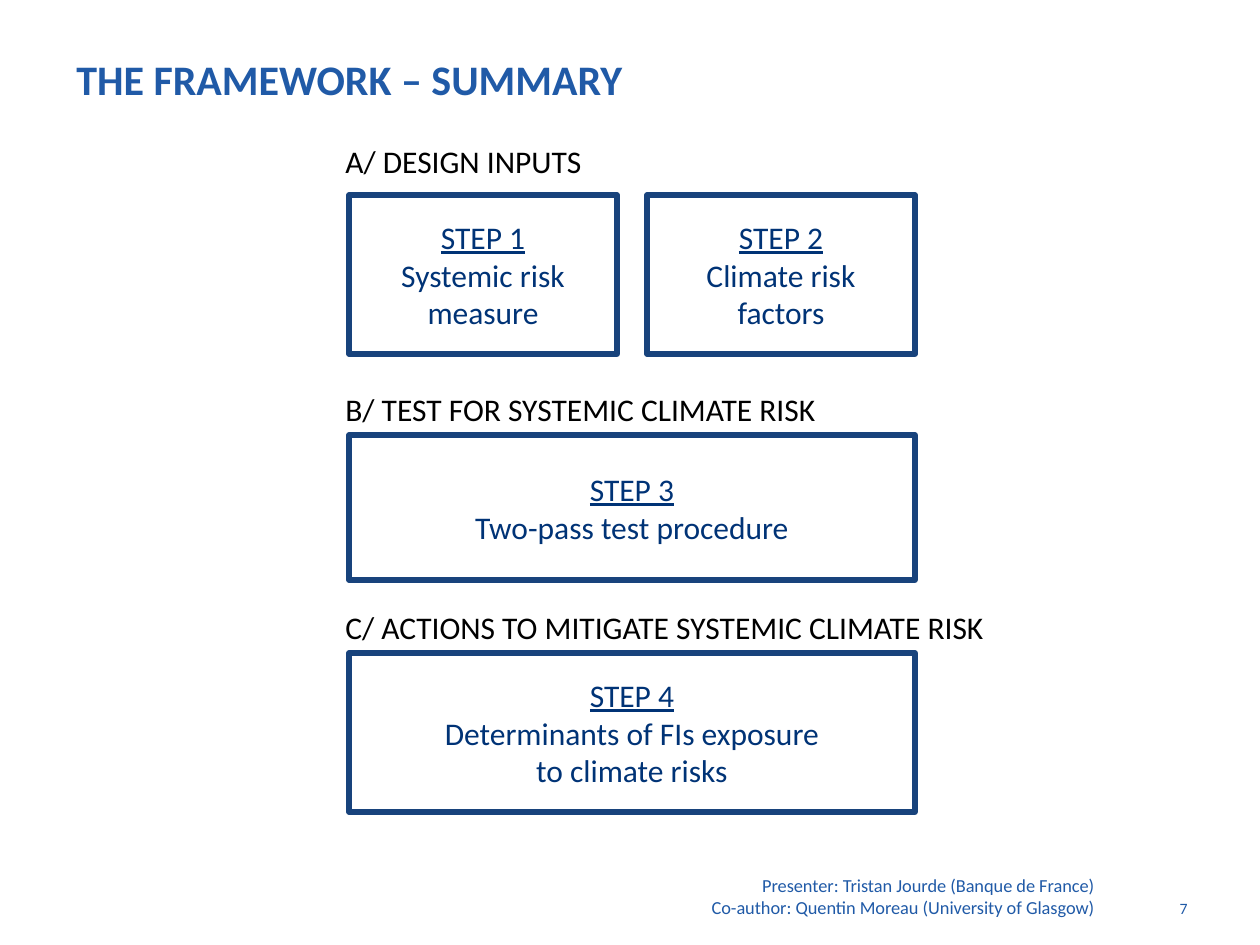
from dataclasses import dataclass

from pptx import Presentation
from pptx.dml.color import RGBColor
from pptx.enum.shapes import MSO_SHAPE as Shape
from pptx.enum.text import MSO_ANCHOR as Anchor, PP_ALIGN as Align
from pptx.util import Emu, Pt

PX = 914400 / 126
FONT = "Calibri"
BLUE = RGBColor(0x20, 0x5A, 0xA7)
NAVY = RGBColor(0x00, 0x33, 0x76)
EDGE = RGBColor(0x18, 0x43, 0x7C)
BLACK = RGBColor(0, 0, 0)

# Grid of the step boxes
LEFT, WIDE, GAP = 349, 566, 30
HALF = (WIDE - GAP) // 2
INDENT = 16  # labels start this far left of the boxes


@dataclass
class Label:
    text: str
    x: int
    y: int
    w: int
    h: int
    size: float = 18
    color: RGBColor = BLACK
    align: Align = Align.LEFT
    anchor: Anchor = Anchor.TOP
    bold: bool = False
    wrap: bool = True


@dataclass
class Step:
    head: str
    body: str
    x: int
    y: int
    w: int
    h: int


def px(n: int) -> Emu:
    return Emu(round(n * PX))


def write(frame, text: str, size: float, color: RGBColor, align: Align) -> None:
    frame.text = text
    for para in frame.paragraphs:
        para.alignment = align
        for run in para.runs:
            font = run.font
            font.name, font.size, font.color.rgb = FONT, Pt(size), color


def draw_label(slide, item: Label) -> None:
    box = slide.shapes.add_textbox(px(item.x), px(item.y), px(item.w), px(item.h))
    frame = box.text_frame
    frame.word_wrap = item.wrap
    frame.vertical_anchor = item.anchor
    write(frame, item.text, item.size, item.color, item.align)
    if item.bold:
        for para in frame.paragraphs:
            para.runs[0].font.bold = True


def draw_step(slide, step: Step) -> None:
    box = slide.shapes.add_shape(
        Shape.RECTANGLE, px(step.x), px(step.y), px(step.w), px(step.h))
    box.shadow.inherit = False
    box.fill.background()
    box.line.color.rgb = EDGE
    box.line.width = Pt(3)
    frame = box.text_frame
    frame.word_wrap = True
    frame.vertical_anchor = Anchor.MIDDLE
    frame.margin_left = frame.margin_right = px(16)
    write(frame, f"{step.head}\n{step.body}", 18, NAVY, Align.CENTER)
    frame.paragraphs[0].runs[0].font.underline = True


LABELS = [
    # Title
    Label("THE FRAMEWORK – SUMMARY", 64, 0, 1134, 158, 24, BLUE,
          anchor=Anchor.MIDDLE, bold=True),
    # Footer
    Label("7", 1126, 893, 74, 49, 9, BLUE, Align.RIGHT),
    Label("Presenter: Tristan Jourde (Banque de France)\n"
          "Co-author: Quentin Moreau (University of Glasgow)",
          422, 868, 685, 49, 10.5, BLUE, Align.RIGHT),
    # Section headings
    Label("A/ DESIGN INPUTS", LEFT - INDENT, 136, 263, 50, wrap=False),
    Label("B/ TEST FOR SYSTEMIC CLIMATE RISK", LEFT - INDENT, 384, 501, 50,
          wrap=False),
    Label("C/ ACTIONS TO MITIGATE SYSTEMIC CLIMATE RISK", LEFT - INDENT, 602,
          670, 50, wrap=False),
]

STEPS = [
    Step("STEP 1", "Systemic risk measure", LEFT, 195, HALF, 159),
    Step("STEP 2", "Climate risk factors", LEFT + HALF + GAP, 195, HALF, 159),
    Step("STEP 3", "Two-pass test procedure", LEFT, 435, WIDE, 145),
    Step("STEP 4", "Determinants of FIs exposure\nto climate risks",
         LEFT, 653, WIDE, 159),
]


def main() -> None:
    deck = Presentation()
    deck.slide_width, deck.slide_height = px(1260), px(945)
    slide = deck.slides.add_slide(deck.slide_layouts[6])
    for step in STEPS:
        draw_step(slide, step)
    for item in LABELS:
        draw_label(slide, item)
    deck.save("out.pptx")


if __name__ == "__main__":
    main()
